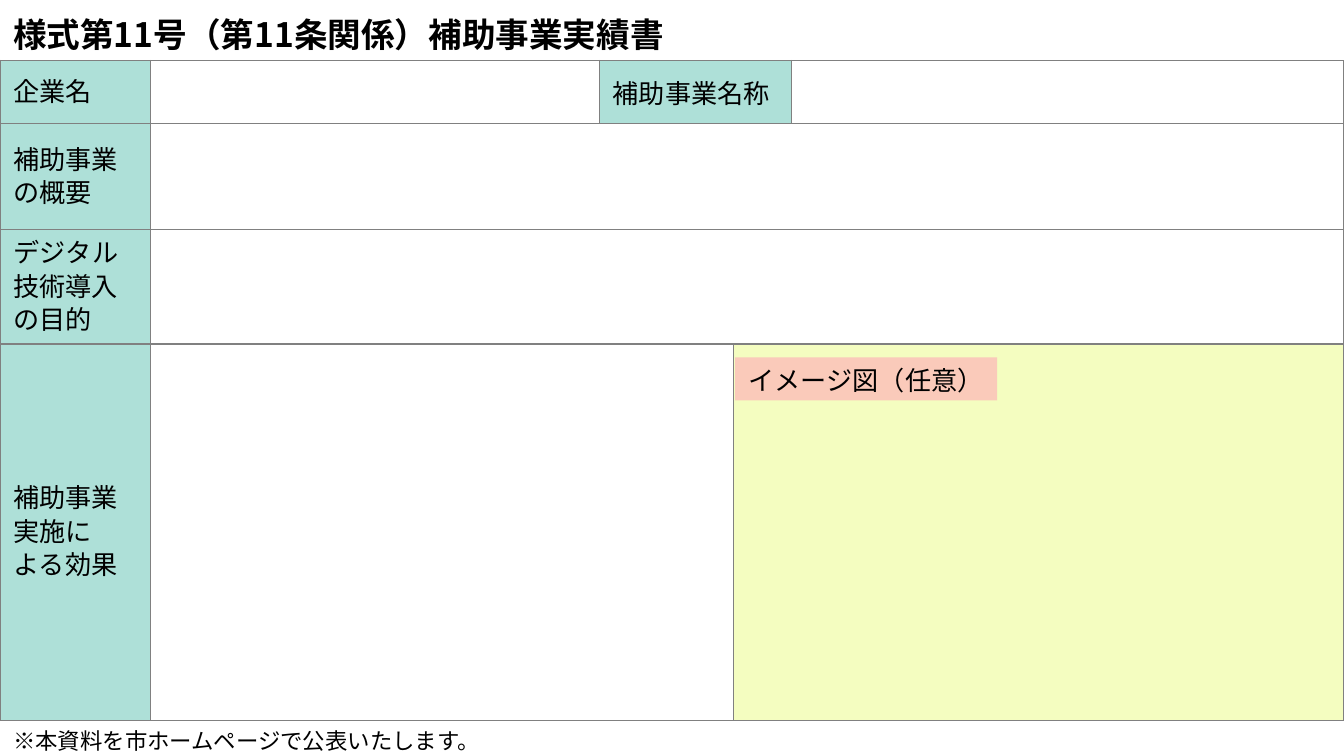
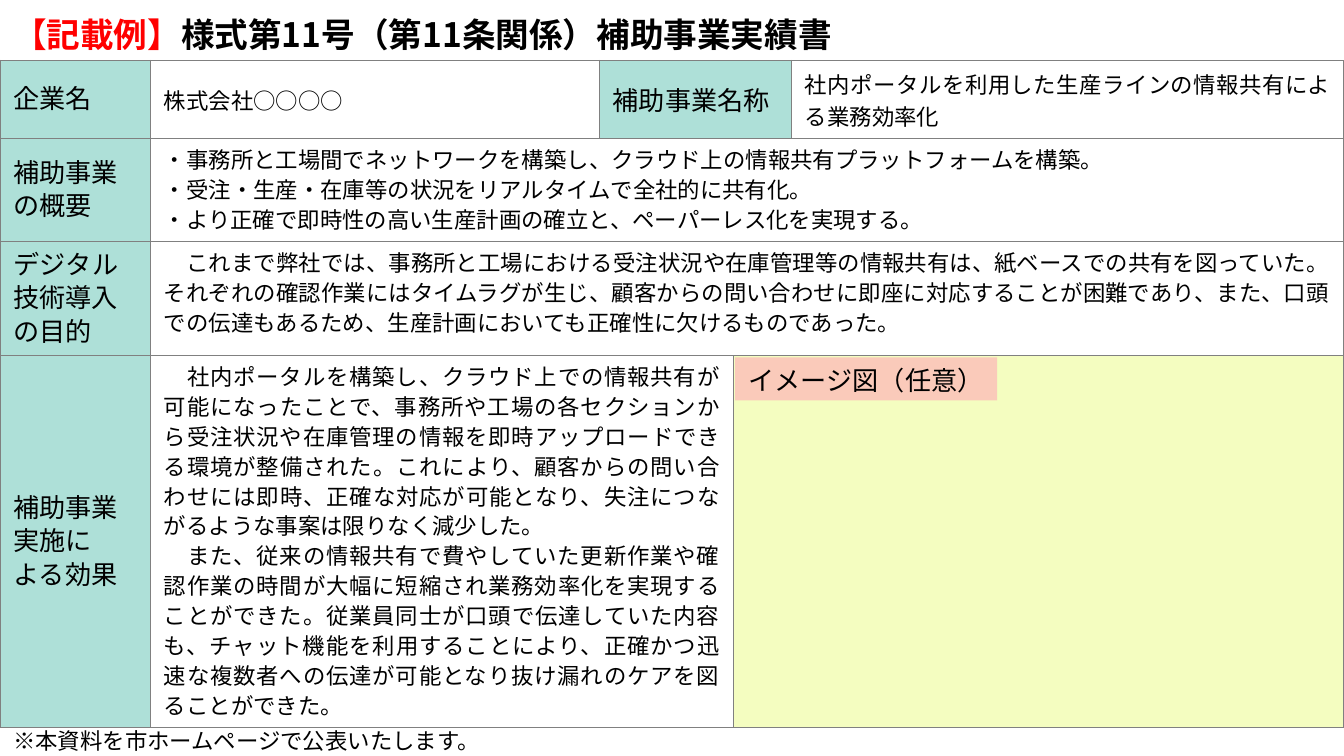
from pptx import Presentation
from pptx import util as u
from pptx.dml.color import RGBColor
from pptx.enum import lang, shapes, text
from pptx.oxml import parse_xml
from pptx.oxml.ns import nsdecls
from dataclasses import dataclass


@dataclass(frozen=True)
class Theme:
    font: str = "Noto Sans CJK JP"
    ink: str = "000000"
    accent: str = "FF0000"
    label: str = "AEE0D8"
    image_area: str = "F4FDC0"
    tag: str = "FACABA"
    border: str = "808080"
    title_size: int = 18
    label_size: int = 14
    body_size: int = 12


T = Theme()
W = 10
H = W * 9 / 16
COLS = [1.12, 3.34, 1, 0.43, 4.11]
TABLE_TOP = 0.08 * H
IMAGE_LEFT = sum(COLS[:3]) + 0.01
MIDDLE, TOP = text.MSO_ANCHOR.MIDDLE, text.MSO_ANCHOR.TOP
JUSTIFY = text.PP_ALIGN.JUSTIFY


def style(tf, size, align=None, spacing=None, bold=False):
    """Format every run of a text frame."""
    for p in tf.paragraphs:
        if align is not None:
            p.alignment = align
        if spacing:
            p.line_spacing = u.Pt(spacing)
        for r in p.runs:
            r.font.size, r.font.bold, r.font.name = u.Pt(size), bold, T.font
            r.font.color.rgb = RGBColor.from_string(T.ink)
            r.font.language_id = lang.MSO_LANGUAGE_ID.JAPANESE
            rPr = r.font._element
            if rPr.find("{*}ea") is None:
                rPr.append(parse_xml(f'<a:ea {nsdecls("a")} typeface="{T.font}"/>'))


def add_text(s, left, top, width, height, words):
    """Add a wrapping text box and return its text frame."""
    tf = s.shapes.add_textbox(*map(u.Inches, (left, top, width, height))).text_frame
    tf.word_wrap = True
    tf.text = words
    return tf


# Form: row and column of each label, with its line spacing
TITLE = "様式第11号（第11条関係）補助事業実績書"
LABELS = {
    (0, 0): ("企業名", 18),
    (0, 2): ("補助事業名称", None),
    (1, 0): ("補助事業の概要", 18),
    (2, 0): ("デジタル技術導入の目的", 18),
    (3, 0): ("補助事業実施に　よる効果", 18),
}
MERGES = [((0, 2), (0, 3)), ((1, 1), (1, 4)), ((2, 1), (2, 4)),
          ((3, 1), (3, 2)), ((3, 3), (3, 4))]

# Example entries: text, line spacing, anchor
EXAMPLE = {
    (0, 1): ("株式会社○○○○", None, MIDDLE),
    (0, 4): ("社内ポータルを利用した生産ラインの情報共有による業務効率化", None, MIDDLE),
    (1, 1): ("・事務所と工場間でネットワークを構築し、クラウド上の情報共有プラットフォームを構築。\n"
             "・受注・生産・在庫等の状況をリアルタイムで全社的に共有化。\n"
             "・より正確で即時性の高い生産計画の確立と、ペーパーレス化を実現する。", 16, MIDDLE),
    (2, 1): ("　これまで弊社では、事務所と工場における受注状況や在庫管理等の情報共有は、"
             "紙ベースでの共有を図っていた。それぞれの確認作業にはタイムラグが生じ、"
             "顧客からの問い合わせに即座に対応することが困難であり、また、"
             "口頭での伝達もあるため、生産計画においても正確性に欠けるものであった。", 16, TOP),
    (3, 1): ("　社内ポータルを構築し、クラウド上での情報共有が可能になったことで、"
             "事務所や工場の各セクションから受注状況や在庫管理の情報を即時アップロードできる"
             "環境が整備された。これにより、顧客からの問い合わせには即時、正確な対応が可能となり、"
             "失注につながるような事案は限りなく減少した。\n"
             "　また、従来の情報共有で費やしていた更新作業や確認作業の時間が大幅に短縮され"
             "業務効率化を実現することができた。従業員同士が口頭で伝達していた内容も、"
             "チャット機能を利用することにより、正確かつ迅速な複数者への伝達が可能となり"
             "抜け漏れのケアを図ることができた。", 16, TOP),
}
PAGES = [("", [0.47, 0.79, 0.83, 2.8], {}),
         ("【記載例】", [0.58, 0.71, 0.83, 2.76], EXAMPLE)]

prs = Presentation()
prs.slide_width, prs.slide_height = u.Inches(W), u.Inches(H)

for prefix, rows, entries in PAGES:
    s = prs.slides.add_slide(prs.slide_layouts[6])

    # Title, with a coloured prefix on the example
    tf = add_text(s, 0, 0, W, TABLE_TOP, prefix or TITLE)
    tf.vertical_anchor = text.MSO_ANCHOR.BOTTOM
    if prefix:
        tf.paragraphs[0].add_run().text = TITLE
    style(tf, T.title_size, spacing=12, bold=True)
    if prefix:
        tf.paragraphs[0].runs[0].font.color.rgb = RGBColor.from_string(T.accent)

    # Form table
    table = s.shapes.add_table(len(rows), len(COLS), 0, u.Inches(TABLE_TOP),
                               u.Inches(W), u.Inches(sum(rows))).table
    table.first_row = table.horz_banding = False
    for col, width in zip(table.columns, COLS):
        col.width = u.Inches(width)
    for row, height in zip(table.rows, rows):
        row.height = u.Inches(height)
    for cell in table.iter_cells():
        tcPr = cell._tc.get_or_add_tcPr()
        for side in "LRTB":
            tcPr.append(parse_xml(
                f'<a:ln{side} {nsdecls("a")} w="{u.Pt(0.75)}"><a:solidFill>'
                f'<a:srgbClr val="{T.border}"/></a:solidFill></a:ln{side}>'))
        cell.fill.background()
    for start, end in MERGES:
        table.cell(*start).merge(table.cell(*end))

    # Labels, entries and the image area
    fills = {**dict.fromkeys(LABELS, T.label), (3, 3): T.image_area}
    for pos, colour in fills.items():
        fill = table.cell(*pos).fill
        fill.solid()
        fill.fore_color.rgb = RGBColor.from_string(colour)
    contents = [(pos, words, spacing, MIDDLE, T.label_size)
                for pos, (words, spacing) in LABELS.items()]
    contents += [(pos, *entry, T.body_size) for pos, entry in entries.items()]
    for pos, words, spacing, anchor, size in contents:
        cell = table.cell(*pos)
        cell.text_frame.text = words
        cell.vertical_anchor = anchor
        if pos[1] == 0:
            cell.margin_right = u.Inches(0.24)  # four characters to a line
        style(cell.text_frame, size, JUSTIFY, spacing)

    # Footnote
    tf = add_text(s, 0, H - 0.26, 0.39 * W, 0.3,
                  "※本資料を市ホームページで公表いたします。")
    tf.auto_size = text.MSO_AUTO_SIZE.SHAPE_TO_FIT_TEXT
    style(tf, T.body_size)

    # Image tag
    sp = s.shapes.add_shape(shapes.MSO_SHAPE.RECTANGLE, u.Inches(IMAGE_LEFT),
                            u.Inches(2.66), u.Inches(1.95), u.Inches(0.32))
    sp.shadow.inherit = False
    sp.fill.solid()
    sp.fill.fore_color.rgb = RGBColor.from_string(T.tag)
    sp.line.fill.background()
    tf = sp.text_frame
    tf.word_wrap = False
    tf.vertical_anchor = TOP
    tf.text = "イメージ図（任意）"
    style(tf, T.label_size, text.PP_ALIGN.CENTER)

prs.save("out.pptx")
